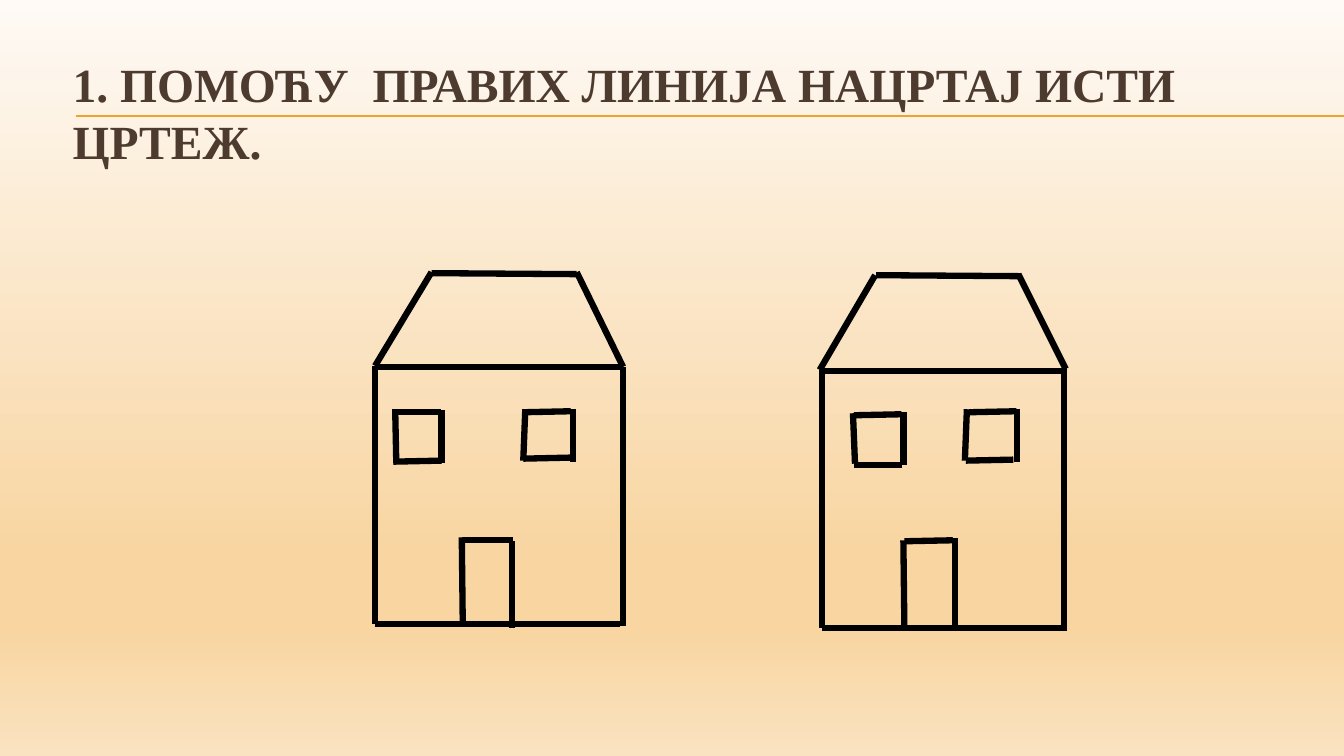
from dataclasses import dataclass

from lxml import etree
from pptx import Presentation
from pptx import util as u
from pptx.dml.color import RGBColor
from pptx.enum import shapes, text
from pptx.oxml.ns import qn


@dataclass(frozen=True)
class Theme:
    font: str = "Times New Roman"
    title_size: float = 34
    title_color: str = "4E3B30"
    rule_color: str = "F0A22E"
    rule_width: float = 0.75
    wall_color: str = "000000"
    wall_width: float = 4.5
    backdrop: tuple = ((0, "FEFAF5"), (74, "F8D5A1"), (83, "F8D5A1"), (100, "FAE3C0"))


THEME = Theme()

# Hand-drawn strokes of each house part: x1, y1, x2, y2 in inches
LEFT_HOUSE = {
    "walls": [(3.72, 3.63, 3.72, 6.19), (3.72, 6.19, 6.15, 6.19),
              (6.18, 3.64, 6.18, 6.21), (3.72, 3.64, 6.15, 3.64)],
    "roof": [(3.72, 3.63, 4.28, 2.7), (6.18, 3.64, 5.72, 2.7),
             (4.28, 2.71, 5.72, 2.72)],
    "left window": [(3.93, 4.57, 3.92, 4.07), (3.89, 4.09, 4.37, 4.09),
                    (3.9, 4.58, 4.38, 4.57), (4.38, 4.59, 4.38, 4.07)],
    "right window": [(5.19, 4.09, 5.66, 4.08), (5.19, 4.57, 5.21, 4.06),
                     (5.19, 4.55, 5.66, 4.54), (5.68, 4.58, 5.68, 4.06)],
    "door": [(4.61, 5.36, 5.09, 5.36), (4.59, 6.19, 4.58, 5.33),
             (5.08, 6.23, 5.08, 5.37)],
}
RIGHT_HOUSE = {
    "walls": [(8.15, 6.23, 10.58, 6.23), (8.15, 3.67, 8.15, 6.23),
              (10.55, 3.67, 10.55, 6.23), (8.15, 3.68, 10.58, 3.68)],
    "roof": [(8.13, 3.67, 8.68, 2.73), (10.57, 3.66, 10.1, 2.72),
             (8.69, 2.73, 10.12, 2.74)],
    "left window": [(8.47, 4.12, 8.94, 4.11), (8.48, 4.6, 8.46, 4.1),
                    (8.96, 4.61, 8.96, 4.09), (8.47, 4.61, 8.95, 4.61)],
    "right window": [(9.57, 4.57, 9.59, 4.06), (10.09, 4.58, 10.09, 4.06),
                     (9.61, 4.09, 10.08, 4.08), (9.58, 4.57, 10.05, 4.56)],
    "door": [(8.97, 6.23, 8.96, 5.36), (8.97, 5.37, 9.45, 5.36),
             (9.47, 6.21, 9.47, 5.34)],
}


def paint_backdrop(slide):
    fill = slide.background.fill
    fill.gradient()
    fill.gradient_angle = 270  # top to bottom
    stops = slide.element.find(".//" + qn("a:gsLst"))
    for stop in list(stops):
        stops.remove(stop)
    for percent, color in THEME.backdrop:
        stop = etree.SubElement(stops, qn("a:gs"), pos=str(percent * 1000))
        etree.SubElement(stop, qn("a:srgbClr"), val=color)


def draw_stroke(slide, ends, color, width):
    stroke = slide.shapes.add_connector(
        shapes.MSO_CONNECTOR.STRAIGHT, *(u.Inches(end) for end in ends))
    stroke.line.color.rgb = RGBColor.from_string(color)
    stroke.line.width = u.Pt(width)
    etree.SubElement(stroke.element.spPr, qn("a:effectLst"))


def draw_house(slide, house):
    for strokes in house.values():
        for ends in strokes:
            draw_stroke(slide, ends, THEME.wall_color, THEME.wall_width)


def write_title(slide, wording):
    title = slide.shapes.title
    title.left, title.top = u.Inches(0.62), u.Inches(0.17)
    title.width, title.height = u.Inches(11.82), u.Inches(1.88)
    frame = title.text_frame
    frame.text = wording
    frame.word_wrap = True
    frame.auto_size = text.MSO_AUTO_SIZE.NONE
    frame.vertical_anchor = text.MSO_ANCHOR.MIDDLE
    task = frame.paragraphs[0]
    task.alignment = text.PP_ALIGN.LEFT
    font = task.runs[0].font
    font.name, font.size, font.bold = THEME.font, u.Pt(THEME.title_size), True
    font.color.rgb = RGBColor.from_string(THEME.title_color)
    # Bring the title in front of the rules
    slide.shapes.element.append(title.element)


def main():
    deck = Presentation()
    deck.slide_width, deck.slide_height = u.Inches(13.33), u.Inches(7.5)
    slide = deck.slides.add_slide(deck.slide_layouts[5])
    paint_backdrop(slide)

    # Double rule behind the title
    for y in (1.15, 1.16):
        draw_stroke(slide, (0.75, y, 13.33, y), THEME.rule_color, THEME.rule_width)
    write_title(slide, "1. ПОМОЋУ  ПРАВИХ ЛИНИЈА НАЦРТАЈ ИСТИ ЦРТЕЖ.")

    # The model house and its twin
    for house in (LEFT_HOUSE, RIGHT_HOUSE):
        draw_house(slide, house)

    deck.save("out.pptx")


if __name__ == "__main__":
    main()
